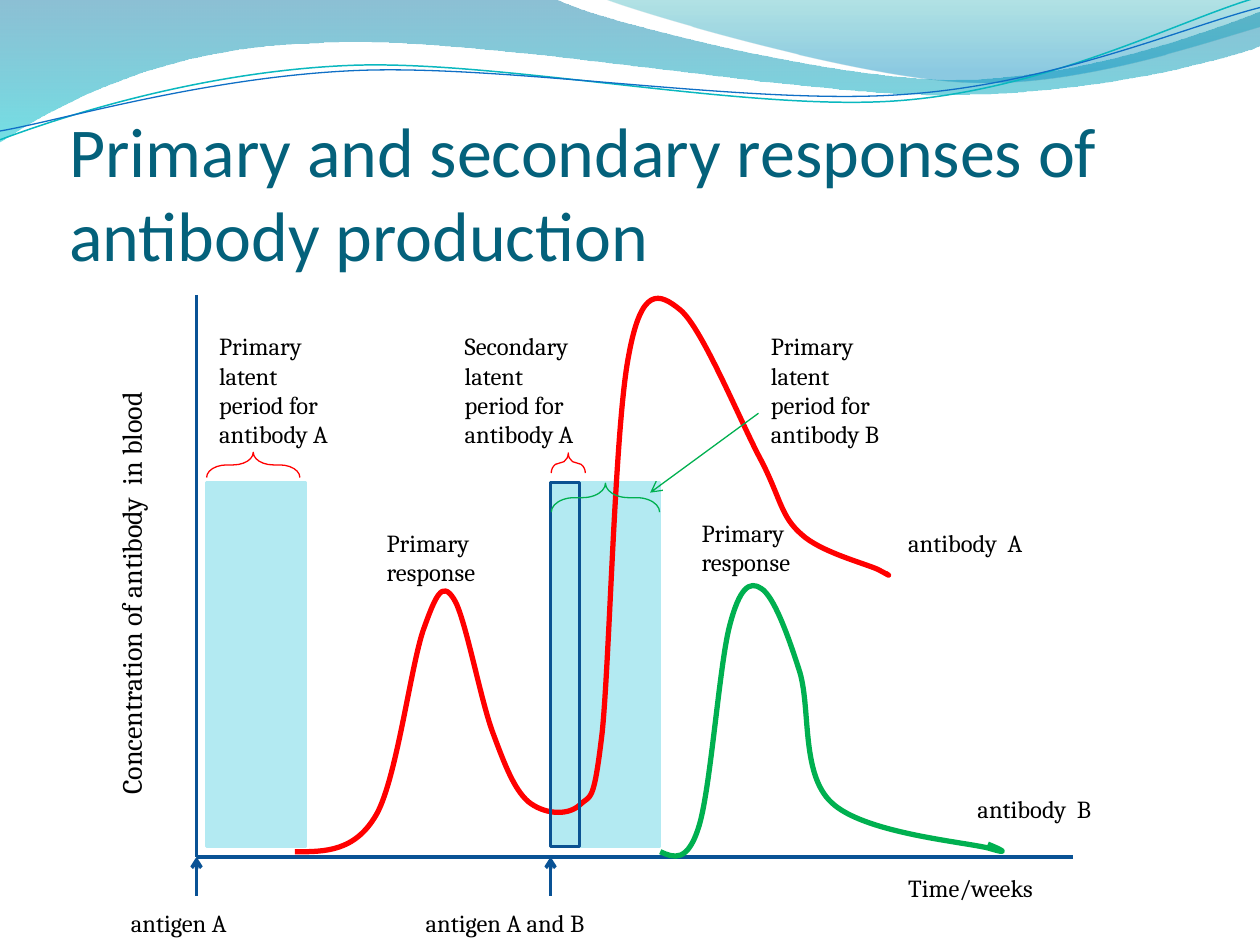
from lxml import etree
from pptx import Presentation
from pptx.dml.color import RGBColor
from pptx.enum.shapes import MSO_CONNECTOR, MSO_SHAPE
from pptx.enum.text import MSO_ANCHOR, MSO_AUTO_SIZE, PP_ALIGN
from pptx.oxml.ns import qn
from pptx.util import Inches, Pt

RECTANGLE, BRACE = MSO_SHAPE.RECTANGLE, MSO_SHAPE.LEFT_BRACE
STRAIGHT = MSO_CONNECTOR.STRAIGHT
LEFT, BOTTOM = PP_ALIGN.LEFT, MSO_ANCHOR.BOTTOM
NO_FIT, GROW = MSO_AUTO_SIZE.NONE, MSO_AUTO_SIZE.SHAPE_TO_FIT_TEXT

RED, GREEN, AXIS, LATENT = "FF0000", "00B050", "095295", "B3EAF2"
ORIGIN_X, AXIS_Y, SECOND_DOSE_X = 1.56, 6.8, 4.37
LATENT_TOP, LATENT_HEIGHT = 3.83, 2.89

# Each outline: start point, then segments of one point (line) or three (Bezier)
WAVE_LEFT = (0, 0), [
    [(4.4, -0.01)],
    [(4.76, 0.17), (6.64, 0.63), (7.58, 0.63)],
    [(8.53, 0.63), (9.58, 0.26), (10, 0.09)],
    [(10.01, 0.36)],
    [(9.83, 0.44), (8.7, 0.76), (7.46, 0.75)],
    [(6.22, 0.75), (3.82, 0.28), (2.57, 0.34)],
    [(1.29, 0.36), (0.46, 0.83), (-0.01, 1.13)]]
WAVE_RIGHT = (4.79, -0.01), [
    [(5.09, 0.11), (6.82, 0.62), (7.69, 0.65)],
    [(8.56, 0.69), (9.61, 0.32), (10, 0.21)],
    [(10, 0)]]
TEAL_RIPPLE = (0, 1.11), [
    [(0.48, 0.93), (1.58, 0.57), (2.77, 0.52)],
    [(3.95, 0.47), (5.93, 0.89), (7.13, 0.8)],
    [(8.33, 0.71), (9.38, 0.15), (9.98, -0.02)]]
BLUE_RIPPLE = (0, 1.04), [
    [(0.47, 0.96), (1.64, 0.61), (2.83, 0.56)],
    [(4.03, 0.51), (5.97, 0.84), (7.17, 0.75)],
    [(8.36, 0.67), (9.41, 0.21), (10, 0.06)]]
ANTIBODY_A = (2.34, 6.76), [
    [(2.58, 6.76), (2.82, 6.76), (2.99, 6.46)],
    [(3.15, 6.17), (3.26, 5.29), (3.36, 5)],
    [(3.46, 4.72), (3.51, 4.61), (3.6, 4.75)],
    [(3.69, 4.88), (3.81, 5.54), (3.91, 5.81)],
    [(4.01, 6.08), (4.08, 6.26), (4.19, 6.36)],
    [(4.31, 6.46), (4.5, 6.48), (4.6, 6.39)],
    [(4.69, 6.3), (4.71, 6.4), (4.78, 5.81)],
    [(4.84, 5.21), (4.88, 3.38), (4.99, 2.82)],
    [(5.09, 2.27), (5.23, 2.32), (5.4, 2.46)],
    [(5.58, 2.61), (5.89, 3.38), (6.05, 3.67)],
    [(6.2, 3.97), (6.2, 4.1), (6.36, 4.24)],
    [(6.51, 4.38), (6.86, 4.47), (6.97, 4.52)],
    [(7.08, 4.58), (7.06, 4.57), (7.03, 4.55)]]
ANTIBODY_B = (5.24, 6.76), [
    [(5.35, 6.81), (5.46, 6.85), (5.55, 6.55)],
    [(5.64, 6.25), (5.71, 5.28), (5.79, 4.97)],
    [(5.87, 4.66), (5.95, 4.61), (6.04, 4.67)],
    [(6.14, 4.73), (6.25, 5.03), (6.34, 5.31)],
    [(6.44, 5.6), (6.35, 6.14), (6.6, 6.37)],
    [(6.85, 6.61), (7.63, 6.68), (7.84, 6.73)],
    [(8.04, 6.79), (7.94, 6.74), (7.84, 6.7)]]


def rgb(value):
    return RGBColor.from_string(value)


def inches(values):
    return [Inches(value) for value in values]


def style(shape, fill=None, line=None, width=0.75):
    shape.shadow.inherit = False
    if fill:
        shape.fill.solid()
        shape.fill.fore_color.rgb = rgb(fill)
    else:
        shape.fill.background()
    if line:
        shape.line.color.rgb = rgb(line)
        shape.line.width = Pt(width)
    else:
        shape.line.fill.background()


def add_outline(slide, outline, line=None, width=0.75, close=False):
    start, segments = outline
    builder = slide.shapes.build_freeform(*inches(start))
    builder.add_line_segments(
        [inches(point) for segment in segments for point in segment], close=close)
    shape = builder.convert_to_shape()
    # Merge every three control points into one Bezier segment
    steps = iter(list(shape.element.iter(qn("a:lnTo"))))
    for segment in segments:
        group = [next(steps) for _ in segment]
        if len(group) == 3:
            curve = etree.Element(qn("a:cubicBezTo"))
            group[0].addprevious(curve)
            for step in group:
                curve.append(step[0])
                step.getparent().remove(step)
    style(shape, line=line, width=width)
    return shape


def add_wave(slide, outline, stops):
    wave = add_outline(slide, outline, close=True)
    wave.fill.gradient()
    wave.fill.gradient_angle = 270
    for stop, (position, color, opacity) in zip(wave.fill.gradient_stops, stops):
        stop.position = position
        stop.color.rgb = rgb(color)
    colors = wave.element.spPr.iter(qn("a:srgbClr"))
    for color, (_, _, opacity) in zip(colors, stops):
        etree.SubElement(color, qn("a:alpha"), val=str(opacity * 1000))


def add_period(slide, left, width, fill=None, line=LATENT):
    period = slide.shapes.add_shape(
        RECTANGLE, *inches((left, LATENT_TOP, width, LATENT_HEIGHT)))
    style(period, fill, line, 2)


def add_brace(slide, box, color):
    brace = slide.shapes.add_shape(BRACE, *inches(box))
    brace.rotation = 90
    brace.adjustments[0] = 0.8
    style(brace, line=color)


def add_line(slide, start, end, color=AXIS, width=2, arrow=False):
    connector = slide.shapes.add_connector(STRAIGHT, *inches(start + end))
    connector.line.color.rgb = rgb(color)
    connector.line.width = Pt(width)
    if arrow:
        etree.SubElement(connector.line._get_or_add_ln(), qn("a:tailEnd"), type="arrow")
    etree.SubElement(connector.element.spPr, qn("a:effectLst"))


def add_run(paragraph, text, size, font, color):
    run = paragraph.add_run()
    run.text = text
    run.font.size = Pt(size)
    run.font.name = font
    run.font.color.rgb = rgb(color)


def add_label(slide, box, *lines, size=14, rotation=0):
    label = slide.shapes.add_textbox(*inches(box))
    label.rotation = rotation
    frame = label.text_frame
    frame.word_wrap = True
    frame.auto_size = GROW
    for number, text in enumerate(lines):
        paragraph = frame.add_paragraph() if number else frame.paragraphs[0]
        add_run(paragraph, text, size, "Cambria", "000000")


def set_title(slide, text):
    title = slide.shapes.title
    title.left, title.top, title.width, title.height = inches((0.55, 0.94, 9, 1.25))
    frame = title.text_frame
    frame.margin_left = frame.margin_right = frame.margin_bottom = 0
    frame.margin_top = Inches(0.05)
    frame.vertical_anchor = BOTTOM
    frame.word_wrap = True
    frame.auto_size = NO_FIT
    frame.paragraphs[0].alignment = LEFT
    add_run(frame.paragraphs[0], text, 40, "Calibri", "04617B")


def main():
    deck = Presentation()
    deck.slide_width, deck.slide_height = inches((10, 7.5))
    slide = deck.slides.add_slide(deck.slide_layouts[5])

    # Wave decoration and title
    add_wave(slide, WAVE_LEFT, [(0, "0074A1", 45), (1, "00C6CF", 55)])
    add_wave(slide, WAVE_RIGHT, [(0, "00A1A9", 30), (0.8, "008BBF", 45)])
    add_outline(slide, TEAL_RIPPLE, "0AB8BF", 0.85)
    add_outline(slide, BLUE_RIPPLE, "0F6FC6", 0.75)
    set_title(slide, "Primary and secondary responses of antibody production")

    # Axes, latent periods and response curves
    add_period(slide, SECOND_DOSE_X, 0.86, LATENT)
    add_line(slide, (ORIGIN_X, 2.34), (ORIGIN_X, AXIS_Y))
    add_line(slide, (ORIGIN_X, AXIS_Y), (8.52, AXIS_Y))
    add_outline(slide, ANTIBODY_A, RED, 3)
    add_period(slide, 1.64, 0.78, LATENT)
    add_period(slide, SECOND_DOSE_X, 0.23, line="0B5292")
    add_outline(slide, ANTIBODY_B, GREEN, 3)

    # Response and curve labels
    for left, top in ((2.97, 4.14), (5.47, 4.06)):
        add_label(slide, (left, top, 1.09, 0.57), "Primary", "response")
    add_label(slide, (7.11, 4.14, 1.33, 0.34), "antibody  A")
    add_label(slide, (7.66, 6.25, 1.33, 0.34), "antibody  B")

    # Latent period labels, braces and pointer
    for left, order, antibody in (
            (1.64, "Primary", "A"), (6.02, "Primary", "B"), (3.59, "Secondary", "A")):
        add_label(slide, (left, 2.58, 1.17, 1.04),
                  f"{order} latent period for antibody {antibody}")
    add_brace(slide, (1.91, 3.32, 0.2, 0.74), RED)
    add_brace(slide, (4.43, 3.54, 0.16, 0.27), RED)
    add_brace(slide, (4.69, 3.52, 0.23, 0.86), GREEN)
    add_line(slide, (6.02, 3.28), (5.16, 3.91), GREEN, 0.75, arrow=True)

    # Antigen doses and axis titles
    add_label(slide, (0.94, 7.16, 1.95, 0.34), "antigen A")
    add_label(slide, (3.28, 7.16, 2.58, 0.34), "antigen A and B")
    add_label(slide, (7.11, 6.88, 1.95, 0.34), "Time/weeks")
    for dose_x in (ORIGIN_X, SECOND_DOSE_X):
        add_line(slide, (dose_x, 7.11), (dose_x, AXIS_Y), arrow=True)
    add_label(slide, (-0.99, 4.19, 4.06, 0.37),
              "Concentration of antibody  in blood", size=16, rotation=270)

    deck.save("out.pptx")


if __name__ == "__main__":
    main()
